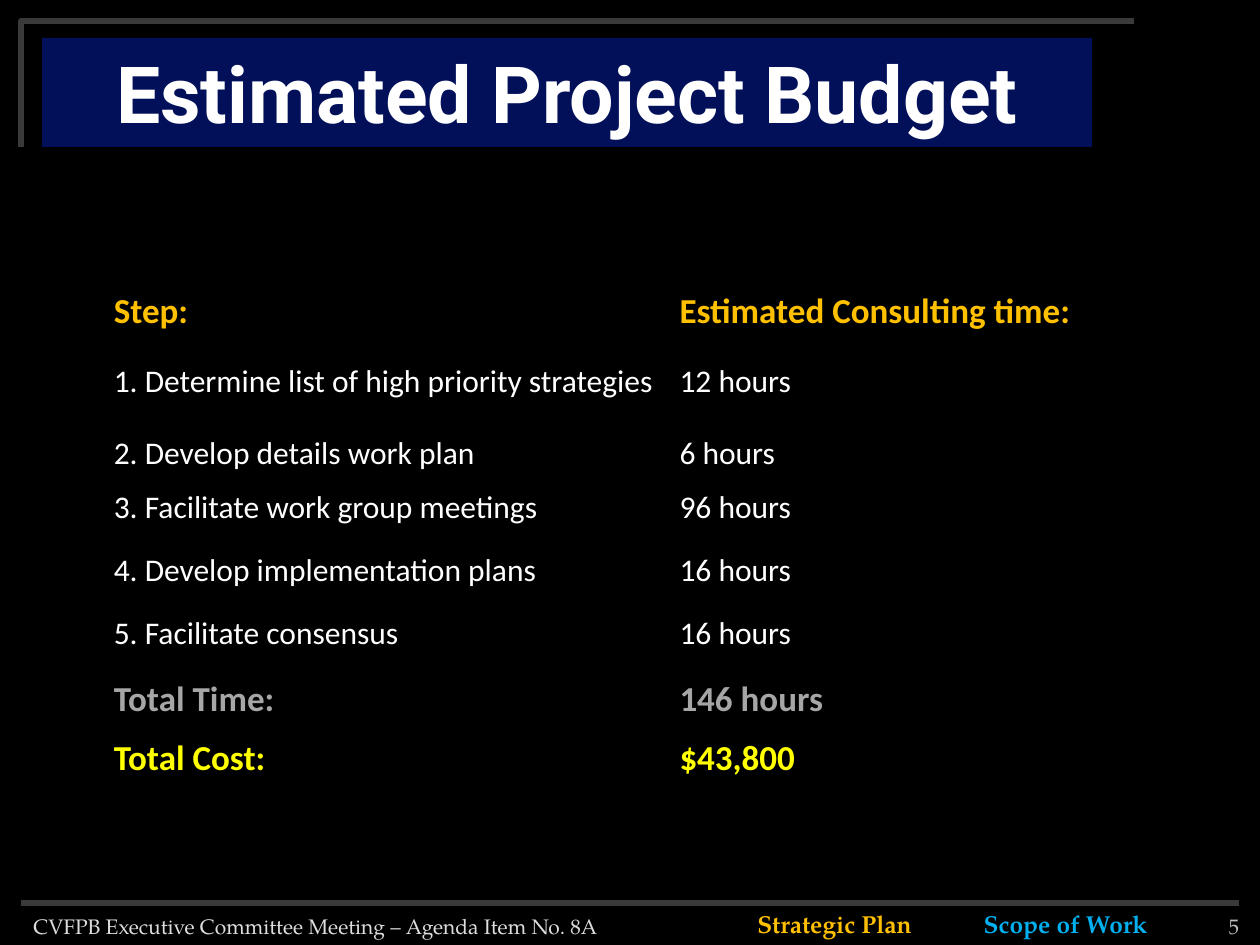
import pptx
import pptx.util
import pptx.dml.color
import pptx.enum.shapes
import pptx.enum.text
import pptx.oxml
from lxml import etree

PP = pptx.enum.text.PP_ALIGN
ANCHOR = pptx.enum.text.MSO_ANCHOR
SERIF = "TeX Gyre Pagella"
BLACK, GREY, WHITE, GOLD = "000000", "3A3A3A", "FFFFFF", "FFC000"

prs = pptx.Presentation()
prs.slide_width, prs.slide_height = pptx.util.Inches(10), pptx.util.Inches(7.5)
U = prs.slide_width / 60  # the slide is a grid of 60 columns by 45 rows


def rgb(value):
    return pptx.dml.color.RGBColor.from_string(value)


def write(tf, text, size, color, font=SERIF, bold=False, align=PP.LEFT,
          anchor=ANCHOR.TOP, margins=(0.1, 0.05), spacing=None):
    """Fill a text frame or table cell with one formatted paragraph."""
    tf.margin_left = tf.margin_right = pptx.util.Inches(margins[0])
    tf.margin_top = tf.margin_bottom = pptx.util.Inches(margins[1])
    tf.vertical_anchor = anchor
    tf.word_wrap = True
    p = getattr(tf, "text_frame", tf).paragraphs[0]
    p.alignment, p.line_spacing = align, spacing
    r = p.add_run()
    r.text = text
    r.font.size, r.font.name, r.font.bold = pptx.util.Pt(size), font, bold
    r.font.color.rgb = rgb(color)


s = prs.slides.add_slide(prs.slide_layouts[5])
s.background.fill.solid()
s.background.fill.fore_color.rgb = rgb(BLACK)

# Corner frame and footer rule
fb = s.shapes.build_freeform(1.15, 7, scale=U)
fb.add_line_segments([(1.15, 0.9), (53.55, 0.9)], close=False)
frame = fb.convert_to_shape()
frame.shadow.inherit = False
frame.fill.background()
rule = s.shapes.add_connector(pptx.enum.shapes.MSO_CONNECTOR.STRAIGHT,
                              int(U), int(43 * U), int(59 * U), int(43 * U))
etree.SubElement(rule._element.spPr, pptx.oxml.ns.qn("a:effectLst"))
for sp in (frame, rule):
    sp.line.color.rgb = rgb(GREY)
    sp.line.width = pptx.util.Pt(3)

# Title
title = s.shapes.title
title.left, title.top, title.width, title.height = [int(n * U) for n in (2, 1.8, 50, 5.2)]
title.fill.solid()
title.fill.fore_color.rgb = rgb("03187F")
srgb = title._element.spPr.find(".//" + pptx.oxml.ns.qn("a:srgbClr"))
etree.SubElement(srgb, pptx.oxml.ns.qn("a:alpha"), val="70000")
write(title.text_frame, "Estimated Project Budget", 45, WHITE, font="Roboto",
      bold=True, align=PP.CENTER, anchor=ANCHOR.MIDDLE)

# Footer: left, top, width, height in grid units
footer = [
    ((1, 43.2, 35, 1.8), "CVFPB Executive Committee Meeting – Agenda Item No. 8A",
     dict(size=12, color="DDDDDD")),
    ((35, 43, 9.5, 2), "Strategic Plan",
     dict(size=14, color=GOLD, bold=True, align=PP.CENTER)),
    ((46, 43, 9.5, 2), "Scope of Work",
     dict(size=14, color="00B0F0", bold=True, align=PP.CENTER)),
    ((56, 43, 3, 2), "5",
     dict(size=12, color="BDBDBD", align=PP.RIGHT, anchor=ANCHOR.BOTTOM, margins=(0, 0.05))),
]
for box, text, style in footer:
    tb = s.shapes.add_textbox(*[int(n * U) for n in box])
    write(tb.text_frame, text, **style)

# Budget table
heading = dict(size=20, color=GOLD, bold=True)
step = dict(size=18, color=WHITE)
rows = [
    (0.58, heading, "Step:", "Estimated Consulting time:"),
    (0.57, step, "1. Determine list of high priority strategies", "12 hours"),
    (0.43, step, "2. Develop details work plan", "6 hours"),
    (0.5, step, "3. Facilitate work group meetings", "96 hours"),
    (0.5, step, "4. Develop implementation plans", "16 hours"),
    (0.5, step, "5. Facilitate consensus", "16 hours"),
    (0.47, dict(heading, color="A6A6A6"), "Total Time:", "146 hours"),
    (0.47, dict(heading, color="FFFF00"), "Total Cost:", "$43,800"),
]
widths = (4.49, 3.96)
table = s.shapes.add_table(len(rows), 2, int(5 * U), int(13.5 * U),
                           pptx.util.Inches(sum(widths)),
                           pptx.util.Inches(sum(row[0] for row in rows))).table
table.first_row = table.horz_banding = False
for col, width in zip(table.columns, widths):
    col.width = pptx.util.Inches(width)

for i, (height, style, *texts) in enumerate(rows):
    table.rows[i].height = pptx.util.Inches(height)
    for j, text in enumerate(texts):
        cell = table.cell(i, j)
        write(cell, text, font="Calibri", margins=(0.07, 0), spacing=1.15, **style)
        # Lines inside the block of steps are thinner than the rest
        is_step = style is step
        thin = {"L": is_step and j == 1, "R": is_step and j == 0,
                "T": is_step and rows[i - 1][1] is step,
                "B": is_step and rows[i + 1][1] is step}
        tcPr = cell._tc.get_or_add_tcPr()
        for side, is_thin in thin.items():
            ln = etree.SubElement(tcPr, pptx.oxml.ns.qn("a:ln" + side),
                                  w=str(pptx.util.Pt(1 if is_thin else 1.5)))
            fill = etree.SubElement(ln, pptx.oxml.ns.qn("a:solidFill"))
            etree.SubElement(fill, pptx.oxml.ns.qn("a:srgbClr"), val=BLACK)
        cell.fill.background()

prs.save("out.pptx")
